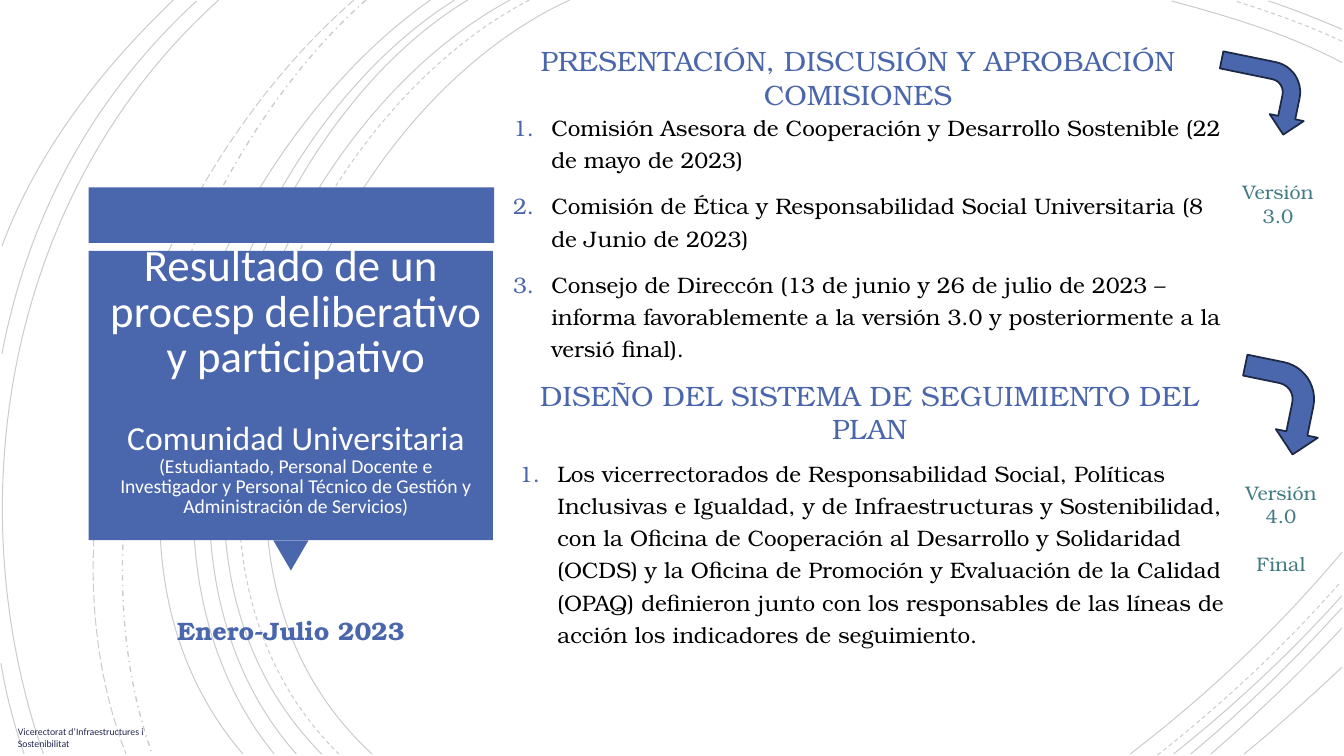
import dataclasses
import typing

import lxml.etree
import pptx
import pptx.dml.color
import pptx.enum.dml
import pptx.enum.shapes
import pptx.enum.text
import pptx.oxml.ns
import pptx.util

Color = pptx.dml.color.RGBColor
Shape = pptx.enum.shapes.MSO_SHAPE
Dash = pptx.enum.dml.MSO_LINE
Align = pptx.enum.text.PP_ALIGN
Anchor = pptx.enum.text.MSO_ANCHOR
qn = pptx.oxml.ns.qn

WIDTH, HEIGHT = pptx.util.Inches(13.33), pptx.util.Inches(7.5)
COLS, ROWS = 13.33, 7.5
BLUE = Color(0x4A, 0x66, 0xAC)
NAVY = Color(0x24, 0x28, 0x52)
EDGE = Color(0x1D, 0x28, 0x44)
TEAL = Color(0x41, 0x7B, 0x84)
BLACK = Color(0, 0, 0)
WHITE = Color(0xFF, 0xFE, 0xFF)
SERIF, SANS = "TeX Gyre Bonum", "Calibri"


class Box(typing.NamedTuple):
    """A place on the grid, in columns and rows."""
    left: float
    top: float
    width: float
    height: float


class Arc(typing.NamedTuple):
    """A cubic curve: start, two handles and end, as (column, row)."""
    points: tuple
    dash: typing.Any = Dash.SOLID
    weight: float = 0.75


@dataclasses.dataclass
class Part:
    kind: typing.Any
    box: Box
    turn: float = 0
    edge: typing.Optional[Color] = None
    bends: tuple = ()


@dataclasses.dataclass
class Label:
    box: Box
    lines: list
    size: float
    color: Color
    font: str = SERIF
    bold: bool = False
    align: typing.Any = Align.CENTER
    anchor: typing.Any = Anchor.TOP
    before: float = 0
    listed: bool = False


def col(count: float) -> int:
    return round(WIDTH * count / COLS)


def row(count: float) -> int:
    return round(HEIGHT * count / ROWS)


def place(box: Box) -> tuple:
    return col(box.left), row(box.top), col(box.width), row(box.height)


def bend(curve: typing.Any) -> None:
    """Turn the three straight segments into one cubic segment."""
    sides = list(curve._element.iter(qn("a:lnTo")))
    cubic = lxml.etree.SubElement(sides[0].getparent(), qn("a:cubicBezTo"))
    for side in sides:
        cubic.append(side[0])
        side.getparent().remove(side)


def draw_arc(slide: typing.Any, arc: Arc) -> None:
    start, *others = [(col(x), row(y)) for x, y in arc.points]
    pen = slide.shapes.build_freeform(*start)
    pen.add_line_segments(others, close=False)
    curve = pen.convert_to_shape()
    bend(curve)
    curve.shadow.inherit = False
    curve.fill.background()
    curve.line.color.rgb = BLACK
    curve.line.width = pptx.util.Pt(arc.weight)
    curve.line.dash_style = arc.dash
    tint = curve.line._ln.find(".//" + qn("a:srgbClr"))
    lxml.etree.SubElement(tint, qn("a:alpha")).set("val", "20000")


def draw_part(slide: typing.Any, part: Part) -> None:
    shape = slide.shapes.add_shape(part.kind, *place(part.box))
    shape.shadow.inherit = False
    shape.rotation = part.turn
    shape.fill.solid()
    shape.fill.fore_color.rgb = BLUE
    for index, value in enumerate(part.bends):
        shape.adjustments[index] = value
    if part.edge is None:
        shape.line.fill.background()
    else:
        shape.line.color.rgb = part.edge
        shape.line.width = pptx.util.Pt(1.25)


def add_number(para: typing.Any) -> None:
    props = para._p.get_or_add_pPr()
    props.set("marL", str(col(0.38)))
    props.set("indent", str(-col(0.38)))
    tint = lxml.etree.SubElement(props, qn("a:buClr"))
    lxml.etree.SubElement(tint, qn("a:srgbClr")).set("val", str(BLUE))
    lxml.etree.SubElement(props, qn("a:buAutoNum")).set("type", "arabicPeriod")


def style(para: typing.Any, font: str, size: float, color: Color,
          bold: bool = False) -> None:
    para.font.name = font
    para.font.size = pptx.util.Pt(size)
    para.font.bold = bold
    para.font.color.rgb = color


def draw_label(slide: typing.Any, label: Label) -> None:
    frame = slide.shapes.add_textbox(*place(label.box)).text_frame
    frame.word_wrap = True
    frame.vertical_anchor = label.anchor
    for index, line in enumerate(label.lines):
        para = frame.paragraphs[0] if index == 0 else frame.add_paragraph()
        para.text = line
        para.alignment = label.align
        if label.listed:
            add_number(para)
            para.line_spacing = 1.2
        if index:
            para.space_before = pptx.util.Pt(label.before)
        style(para, label.font, label.size, label.color, label.bold)


def draw_title(slide: typing.Any) -> None:
    """Fill the title and lift it above the blue panel."""
    title = slide.shapes.title
    title.left, title.top, title.width, title.height = place(Box(0.97, 2.88, 3.93, 2.69))
    frame = title.text_frame
    frame.word_wrap = True
    frame.auto_size = pptx.enum.text.MSO_AUTO_SIZE.NONE
    frame.vertical_anchor = Anchor.BOTTOM
    frame.margin_left = frame.margin_right = frame.margin_top = col(0.11)
    frame.margin_bottom = row(0.44)
    for index, (line, size, before) in enumerate(TITLE):
        para = frame.paragraphs[0] if index == 0 else frame.add_paragraph()
        para.text = line
        para.alignment = Align.CENTER
        para.line_spacing = 0.85
        if before:
            para.space_before = pptx.util.Pt(before)
        style(para, SANS, size, WHITE)
    title._element.getparent().append(title._element)


TITLE = [
    ("Resultado de un \vprocesp deliberativo y participativo", 32, 0),
    ("Comunidad Universitaria", 24, 29),
    ("(Estudiantado, Personal Docente e Investigador y Personal Técnico de "
     "Gestión y Administración de Servicios)", 14, 0),
]
ARCS = [
    Arc(((5.65, 0), (3.15, 1.15), (1.43, 5.4), (3.69, 7.48))),
    Arc(((13.31, 0.62), (12.78, 0.34), (12.18, 0.16), (11.62, 0.01))),
    Arc(((11.21, 7.48), (11.97, 6.9), (12.69, 6.22), (13.31, 5.48))),
    Arc(((5.25, 0), (2.85, 1.25), (1.23, 5.37), (3.36, 7.48)), Dash.DASH),
    Arc(((13.31, 0.41), (12.97, 0.25), (12.6, 0.12), (12.25, 0.01)), Dash.DASH),
    Arc(((11.48, 7.49), (12.13, 6.98), (12.75, 6.4), (13.3, 5.77)), Dash.DASH),
    Arc(((5.06, 0), (2.7, 1.27), (1.1, 5.37), (3.19, 7.48))),
    Arc(((13.31, 0.29), (13.07, 0.19), (12.83, 0.09), (12.58, 0.01))),
    Arc(((11.64, 7.48), (12.23, 7.01), (12.8, 6.48), (13.31, 5.91))),
    Arc(((4.64, 0), (2.44, 1.33), (1.1, 5.41), (2.94, 7.48))),
    Arc(((11.81, 7.48), (12.34, 7.04), (12.84, 6.55), (13.31, 6.03))),
    Arc(((4.51, 0), (2.31, 1.38), (0.97, 5.33), (2.72, 7.48))),
    Arc(((12.01, 7.48), (12.46, 7.09), (12.9, 6.67), (13.31, 6.23))),
    Arc(((4.27, 0), (2.17, 1.47), (0.53, 5.29), (2.41, 7.48))),
    Arc(((12.34, 7.48), (12.67, 7.21), (12.99, 6.92), (13.31, 6.62))),
    Arc(((3.63, 0), (1.76, 1.66), (0.65, 5.09), (1.51, 7.48)), Dash.DASH_DOT, 1),
    Arc(((3.51, 0), (1.57, 1.69), (0.29, 4.99), (1.25, 7.48)), Dash.LONG_DASH),
    Arc(((2.17, 0), (0.11, 1.85), (-0.46, 4.9), (0.43, 7.48))),
    Arc(((1.95, 0.01), (0.92, 0.96), (0.28, 2.14), (0.02, 3.51))),
    Arc(((0.01, 6.58), (0.06, 6.89), (0.14, 7.19), (0.24, 7.48))),
    Arc(((1.72, 0), (1, 0.69), (0.37, 1.5), (0.02, 2.44))),
]
BENDS = (0.25, 0.25, 0.25, 0.44)
PARTS = [
    Part(Shape.RECTANGLE, Box(0.88, 1.86, 4.02, 0.55)),
    Part(Shape.ISOSCELES_TRIANGLE, Box(2.71, 5.36, 0.35, 0.3), 180),
    Part(Shape.RECTANGLE, Box(0.88, 2.49, 4.01, 2.87)),
    Part(Shape.BENT_ARROW, Box(12.17, 0.48, 0.69, 0.92), 101.6, EDGE, BENDS),
    Part(Shape.BENT_ARROW, Box(12.26, 3.61, 0.88, 0.85), 101.6, EDGE, BENDS),
]
LABELS = [
    Label(Box(0.08, 7.15, 1.46, 0.34), ["Vicerectorat d’Infraestructures i Sostenibilitat"],
          7, NAVY, SANS, align=Align.LEFT),
    Label(Box(4.99, 1.03, 7.24, 1.03), [
        "Comisión Asesora de Cooperación y Desarrollo Sostenible (22 de mayo de 2023)",
        "Comisión de Ética y Responsabilidad Social Universitaria (8 de Junio de 2023)",
        "Consejo de Direccón (13 de junio y 26 de julio de 2023 – informa favorablemente "
        "a la versión 3.0 y posteriormente a la versió final).",
    ], 16, BLACK, align=Align.LEFT, before=10, listed=True),
    Label(Box(1.61, 6.06, 2.55, 0.4), ["Enero-Julio 2023"], 18, BLUE, bold=True),
    Label(Box(4.9, 0.39, 7.22, 0.75), ["PRESENTACIÓN, DISCUSIÓN Y APROBACIÓN COMISIONES"],
          20, BLUE, anchor=Anchor.MIDDLE),
    Label(Box(12.2, 1.74, 0.95, 0.57), ["Versión 3.0"], 14, TEAL),
    Label(Box(5.05, 4.46, 7.32, 1.03), [
        "Los vicerrectorados de Responsabilidad Social, Políticas Inclusivas e Igualdad, y de "
        "Infraestructuras y Sostenibilidad, con la Oficina de Cooperación al Desarrollo y "
        "Solidaridad (OCDS) y la Oficina de Promoción y Evaluación de la Calidad (OPAQ) "
        "definieron junto con los responsables de las líneas de acción los indicadores de "
        "seguimiento.",
    ], 16, BLACK, align=Align.LEFT, listed=True),
    Label(Box(4.88, 3.71, 7.49, 0.75), ["DISEÑO DEL SISTEMA DE SEGUIMIENTO DEL PLAN"],
          20, BLUE, anchor=Anchor.MIDDLE),
    Label(Box(12.23, 4.72, 0.95, 1.04), ["Versión 4.0", "Final"], 14, TEAL, before=17),
]


def main() -> None:
    deck = pptx.Presentation()
    deck.slide_width, deck.slide_height = WIDTH, HEIGHT
    slide = deck.slides.add_slide(deck.slide_layouts[5])
    for draw, items in ((draw_arc, ARCS), (draw_part, PARTS), (draw_label, LABELS)):
        for item in items:
            draw(slide, item)
    draw_title(slide)
    deck.save("out.pptx")


if __name__ == "__main__":
    main()
